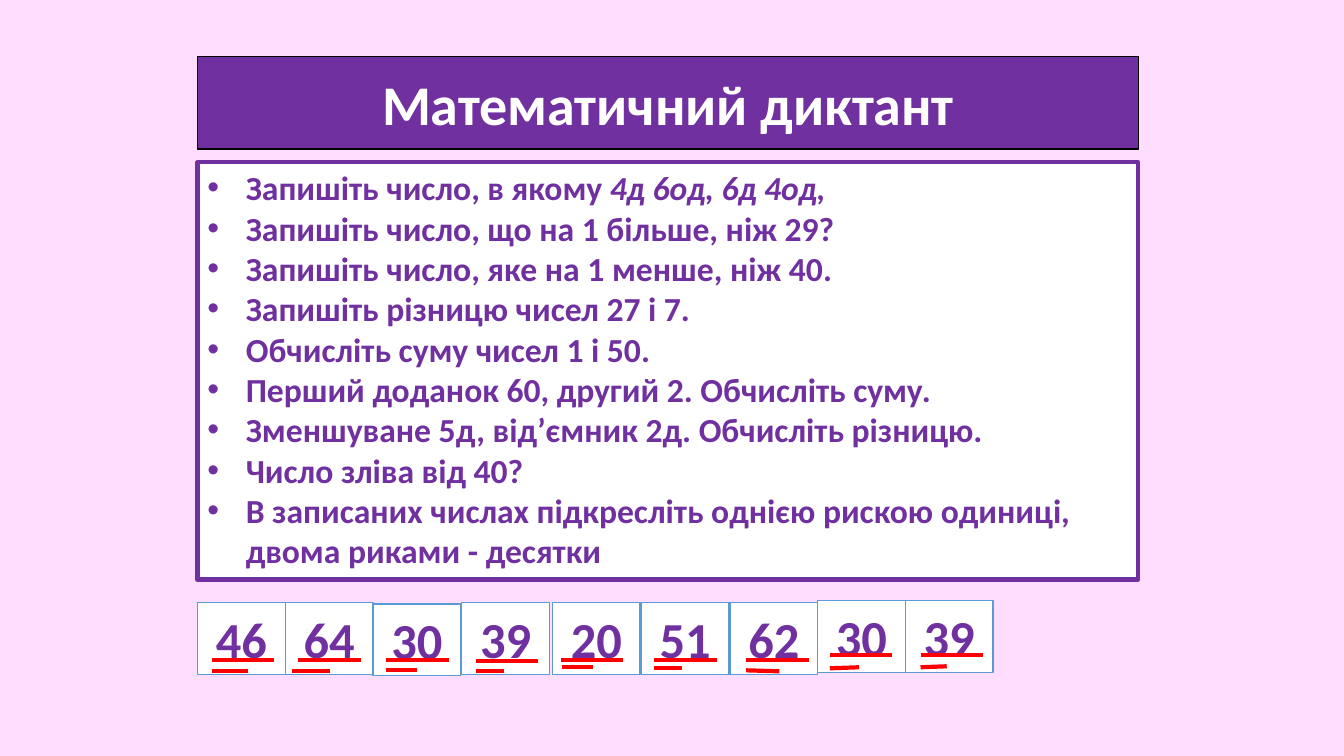
from dataclasses import dataclass
from lxml import etree
from pptx import Presentation
from pptx.dml.color import RGBColor
from pptx.enum.shapes import MSO_CONNECTOR, MSO_SHAPE
from pptx.enum.text import MSO_ANCHOR, MSO_AUTO_SIZE, PP_ALIGN
from pptx.oxml.ns import qn
from pptx.util import Inches, Pt

TITLE = "Математичний диктант"
# Each task is a plain part and an italic part.
TASKS = [
    ("Запишіть число, в якому ", "4д 6од, 6д 4од,"),
    ("Запишіть число, що на 1 більше, ніж 29?", ""),
    ("Запишіть число, яке на 1 менше, ніж 40.", ""),
    ("Запишіть різницю чисел 27 і 7.", ""),
    ("Обчисліть суму чисел 1 і 50.", ""),
    ("Перший доданок 60, другий 2. Обчисліть суму.", ""),
    ("Зменшуване 5д, від’ємник 2д. Обчисліть різницю.", ""),
    ("Число зліва від 40?", ""),
    ("В записаних числах підкресліть однією рискою одиниці, двома риками - десятки", ""),
]
# Number, card (left, top), long underline (x, y), short underline (x1, y1, x2, y2)
ANSWERS = [
    ("46", (1.96, 5.98), (2.1, 6.55), (2.1, 6.66, 2.46, 6.66)),
    ("64", (2.83, 5.98), (2.96, 6.55), (2.9, 6.66, 3.27, 6.66)),
    ("30", (3.7, 5.99), (3.83, 6.55), (3.83, 6.65, 4.14, 6.65)),
    ("39", (4.58, 5.98), (4.72, 6.56), (4.72, 6.66, 5, 6.66)),
    ("20", (5.48, 5.98), (5.56, 6.55), (5.57, 6.62, 5.88, 6.62)),
    ("51", (6.36, 5.98), (6.49, 6.55), (6.49, 6.63, 6.76, 6.63)),
    ("62", (7.24, 5.98), (7.4, 6.55), (7.4, 6.65, 7.73, 6.66)),
    ("30", (8.11, 5.96), (8.23, 6.5), (8.23, 6.63, 8.52, 6.62)),
    ("39", (8.98, 5.96), (9.13, 6.5), (9.13, 6.62, 9.39, 6.61)),
]

LEFT, WIDTH = 1.96, 9.33
CARD_WIDTH, CARD_HEIGHT = 0.87, 0.71
UNDERLINE = 0.62
HANG = 0.38


@dataclass(frozen=True)
class Theme:
    font: str = "Calibri"
    background: RGBColor = RGBColor(0xFF, 0xDD, 0xFF)
    purple: RGBColor = RGBColor(0x70, 0x30, 0xA0)
    white: RGBColor = RGBColor(0xFF, 0xFF, 0xFF)
    black: RGBColor = RGBColor(0, 0, 0)
    blue: RGBColor = RGBColor(0x5B, 0x9B, 0xD5)
    red: RGBColor = RGBColor(0xFF, 0, 0)
    title_size: Pt = Pt(40)
    task_size: Pt = Pt(24)
    answer_size: Pt = Pt(36)
    thin: Pt = Pt(1)
    thick: Pt = Pt(3)


THEME = Theme()


def paint(shape, fill, outline, weight):
    shape.fill.solid()
    shape.fill.fore_color.rgb = fill
    shape.line.color.rgb = outline
    shape.line.width = weight


def style(paragraph, size, color, align):
    paragraph.alignment = align
    for run in paragraph.runs:
        run.font.name = THEME.font
        run.font.size = size
        run.font.bold = True
        run.font.color.rgb = color


def add_panel(slide, left, top, width, height, outline, weight):
    """Add a white rectangle whose text starts at the top."""
    panel = slide.shapes.add_shape(
        MSO_SHAPE.RECTANGLE, Inches(left), Inches(top), Inches(width), Inches(height))
    panel.shadow.inherit = False
    paint(panel, THEME.white, outline, weight)
    panel.text_frame.word_wrap = True
    panel.text_frame.vertical_anchor = MSO_ANCHOR.TOP
    return panel


def add_bullet(paragraph):
    properties = paragraph._p.get_or_add_pPr()
    properties.set("marL", str(Inches(HANG)))
    properties.set("indent", str(-Inches(HANG)))
    etree.SubElement(properties, qn("a:buFont")).set("typeface", "Arial")
    etree.SubElement(properties, qn("a:buChar")).set("char", "•")


def add_underline(slide, x1, y1, x2, y2):
    underline = slide.shapes.add_connector(
        MSO_CONNECTOR.STRAIGHT, Inches(x1), Inches(y1), Inches(x2), Inches(y2))
    underline.line.color.rgb = THEME.red
    underline.line.width = THEME.thick
    etree.SubElement(underline._element.spPr, qn("a:effectLst"))


def add_title(slide):
    title = slide.shapes.title
    title.left, title.top = Inches(LEFT), Inches(0.56)
    title.width, title.height = Inches(WIDTH), Inches(0.92)
    paint(title, THEME.purple, THEME.black, THEME.thin)
    frame = title.text_frame
    frame.text = TITLE
    frame.auto_size = MSO_AUTO_SIZE.NONE
    frame.vertical_anchor = MSO_ANCHOR.MIDDLE
    style(frame.paragraphs[0], THEME.title_size, THEME.white, PP_ALIGN.CENTER)


def add_tasks(slide):
    frame = add_panel(slide, LEFT, 1.61, WIDTH, 4.14, THEME.purple, THEME.thick).text_frame
    for index, (plain, italic) in enumerate(TASKS):
        task = frame.add_paragraph() if index else frame.paragraphs[0]
        task.text = plain
        add_bullet(task)
        if italic:
            emphasis = task.add_run()
            emphasis.text = italic
            emphasis.font.italic = True
        style(task, THEME.task_size, THEME.purple, PP_ALIGN.LEFT)


def add_answers(slide):
    for number, (left, top), _, _ in ANSWERS:
        card = add_panel(slide, left, top, CARD_WIDTH, CARD_HEIGHT, THEME.blue, THEME.thin)
        card.text_frame.text = number
        style(card.text_frame.paragraphs[0], THEME.answer_size, THEME.purple, PP_ALIGN.CENTER)
    for _, _, (x, y), tens in ANSWERS:
        add_underline(slide, x, y, x + UNDERLINE, y)
        add_underline(slide, *tens)


def main():
    deck = Presentation()
    deck.slide_width, deck.slide_height = Inches(13.33), Inches(7.5)
    slide = deck.slides.add_slide(deck.slide_layouts[5])
    slide.background.fill.solid()
    slide.background.fill.fore_color.rgb = THEME.background
    add_title(slide)
    add_tasks(slide)
    add_answers(slide)
    deck.save("out.pptx")


if __name__ == "__main__":
    main()
